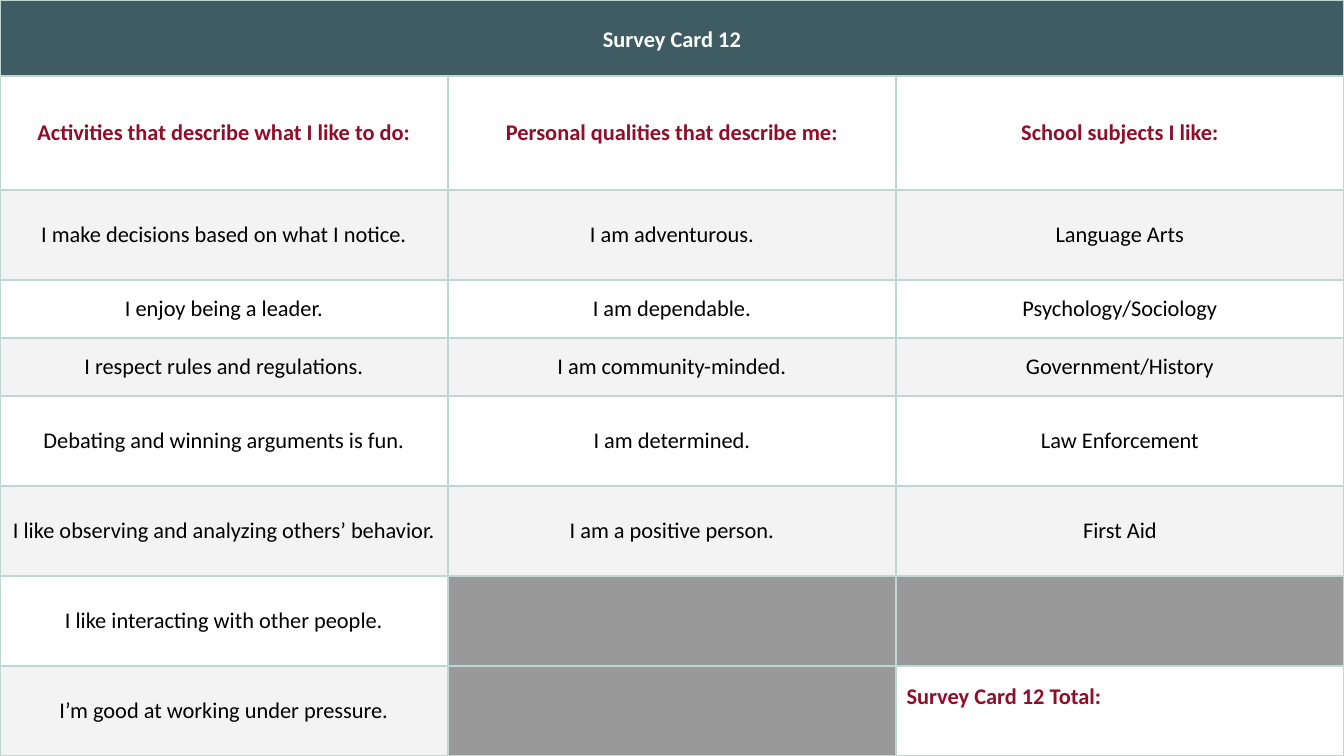
from lxml.etree import SubElement
from pptx import Presentation
from pptx.dml.color import RGBColor
from pptx.enum.text import MSO_ANCHOR, PP_ALIGN
from pptx.oxml.ns import qn
from pptx.util import Cm, Pt

# Content
TITLE = "Survey Card 12"
HEADINGS = [
    "Activities that describe what I like to do:",
    "Personal qualities that describe me:",
    "School subjects I like:",
]
ACTIVITIES = [
    "I make decisions based on what I notice.",
    "I enjoy being a leader.",
    "I respect rules and regulations.",
    "Debating and winning arguments is fun.",
    "I like observing and analyzing others’ behavior.",
    "I like interacting with other people.",
    "I’m good at working under pressure.",
]
QUALITIES = [
    "I am adventurous.",
    "I am dependable.",
    "I am community-minded.",
    "I am determined.",
    "I am a positive person.",
]
SUBJECTS = [
    "Language Arts",
    "Psychology/Sociology",
    "Government/History",
    "Law Enforcement",
    "First Aid",
]
TOTAL = "Survey Card 12 Total:"

COLORS = {
    "title": "3E5C61",
    "white": "FFFFFF",
    "band": "F3F3F3",
    "unused": "999999",
    "accent": "910D28",
    "text": "000000",
    "border": "BED7D3",
}
FONT = "Calibri"
WIDTH = 25.4
ROW_HEIGHTS = [1.44, 2.15, 1.7, 1.1, 1.1, 1.7, 1.7, 1.7, 1.7]


def add_borders(cell):
    properties = cell._tc.get_or_add_tcPr()
    for position, side in enumerate(("a:lnL", "a:lnR", "a:lnT", "a:lnB")):
        line = properties.makeelement(qn(side), {"w": str(Pt(1))})
        fill = SubElement(line, qn("a:solidFill"))
        SubElement(fill, qn("a:srgbClr"), val=COLORS["border"])
        properties.insert(position, line)


def style_cell(cell, fill, text="", color="text", bold=False, align=PP_ALIGN.CENTER):
    cell.fill.solid()
    cell.fill.fore_color.rgb = RGBColor.from_string(COLORS[fill])
    cell.vertical_anchor = MSO_ANCHOR.MIDDLE
    cell.margin_left = cell.margin_right = Cm(0.2)
    cell.margin_top = cell.margin_bottom = Cm(0.2)
    add_borders(cell)
    if not text:
        return
    cell.text_frame.text = text
    paragraph = cell.text_frame.paragraphs[0]
    paragraph.alignment = align
    font = paragraph.runs[0].font
    font.name, font.size, font.bold = FONT, Pt(12), bold
    font.color.rgb = RGBColor.from_string(COLORS[color])


presentation = Presentation()
presentation.slide_width = Cm(WIDTH)
presentation.slide_height = Cm(sum(ROW_HEIGHTS))
slide = presentation.slides.add_slide(presentation.slide_layouts[6])

# Table grid over the whole slide
columns = [ACTIVITIES, QUALITIES, SUBJECTS]
table = slide.shapes.add_table(
    len(ROW_HEIGHTS), len(columns), 0, 0, presentation.slide_width, presentation.slide_height
).table
for row, height in zip(table.rows, ROW_HEIGHTS):
    row.height = Cm(height)

# Title row
for column in range(len(columns)):
    style_cell(table.cell(0, column), "title")
title_cell = table.cell(0, 0)
title_cell.merge(table.cell(0, len(columns) - 1))
style_cell(title_cell, "title", TITLE, "white", bold=True)
title_cell.text_frame.paragraphs[0].line_spacing = 1.15
title_cell.text_frame.paragraphs[0].space_after = Pt(6)

# Headings, then banded answers; cells without an answer are grey
total_position = (len(ROW_HEIGHTS) - 1, len(columns) - 1)
for column, (heading, answers) in enumerate(zip(HEADINGS, columns)):
    style_cell(table.cell(1, column), "white", heading, "accent", bold=True)
    for index in range(len(ACTIVITIES)):
        row = index + 2
        if (row, column) == total_position:
            continue
        if index < len(answers):
            band = "white" if index % 2 else "band"
            style_cell(table.cell(row, column), band, answers[index])
        else:
            style_cell(table.cell(row, column), "unused")

# Total, set above the middle to leave room for writing
total_cell = table.cell(*total_position)
style_cell(total_cell, "white", TOTAL, "accent", bold=True, align=PP_ALIGN.LEFT)
total_cell.vertical_anchor = MSO_ANCHOR.TOP
total_cell.margin_top = Cm(0.33)

presentation.save("out.pptx")
